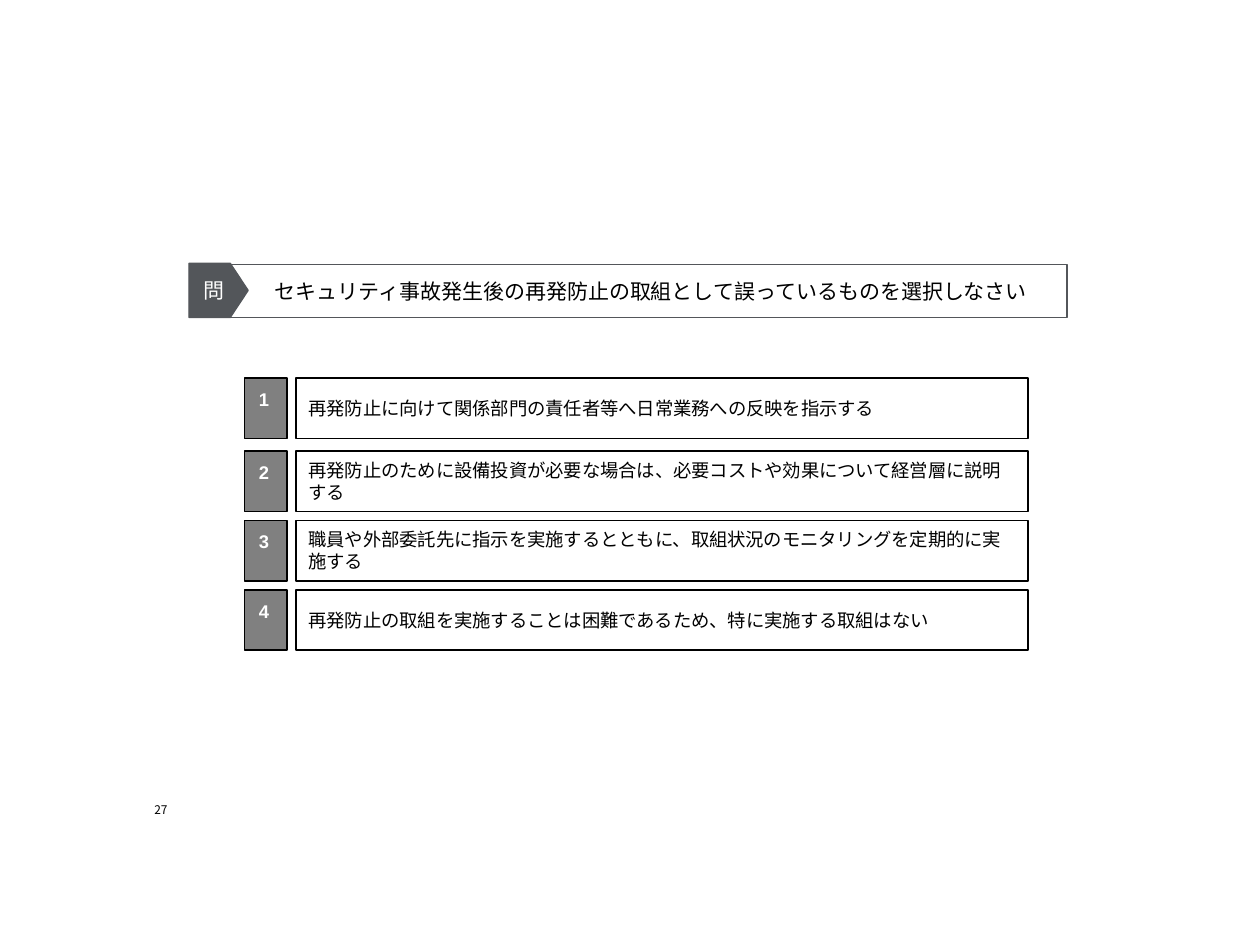
from lxml.etree import SubElement
from pptx import Presentation
from pptx.dml.color import RGBColor
from pptx.enum.shapes import MSO_SHAPE
from pptx.enum.text import MSO_ANCHOR, MSO_AUTO_SIZE, PP_ALIGN
from pptx.oxml.ns import qn
from pptx.util import Inches, Pt

JAPANESE_FONT = "Noto Sans CJK JP"


def color(value):
    return RGBColor.from_string(value)


def write_text(shape, text, size=10.5, font="Arial", ink="000000", bold=False,
               align=PP_ALIGN.LEFT, anchor=MSO_ANCHOR.MIDDLE,
               insets=(0.1, 0.05, 0.1, 0.05), wrap=True):
    frame = shape.text_frame
    frame.auto_size = MSO_AUTO_SIZE.NONE
    frame.word_wrap = wrap
    frame.vertical_anchor = anchor
    (frame.margin_left, frame.margin_top,
     frame.margin_right, frame.margin_bottom) = map(Inches, insets)
    para = frame.paragraphs[0]
    para.alignment = align
    span = para.add_run()
    span.text = text
    span.font.size = Pt(size)
    span.font.name = font
    span.font.bold = bold
    span.font.color.rgb = color(ink)
    east_asian = SubElement(span.font._element, qn("a:ea"))
    east_asian.set("typeface", JAPANESE_FONT)


class QuizPage:
    slate = "53565A"
    gray = "808080"
    white = "FFFFFF"
    black = "000000"

    def __init__(self, deck):
        self.page = deck.slides.add_slide(deck.slide_layouts[5])

    def paint(self, shape, fill, line, width):
        if fill:
            shape.fill.solid()
            shape.fill.fore_color.rgb = color(fill)
        else:
            shape.fill.background()
        shape.line.color.rgb = color(line)
        shape.line.width = Pt(width)

    def block(self, kind, place, fill, line, width=1):
        shape = self.page.shapes.add_shape(kind, *map(Inches, place))
        shape.shadow.inherit = False
        self.paint(shape, fill, line, width)
        return shape

    def question(self, text):
        title = self.page.shapes.title
        title.left, title.top, title.width, title.height = map(
            Inches, (1.8, 2.1, 6.67, 0.42))
        self.paint(title, self.white, self.slate, 1)
        write_text(title, text, size=12, insets=(0.38, 0.03, 0.03, 0.03))

    def question_tag(self, text):
        tag = self.block(MSO_SHAPE.PENTAGON, (1.5, 2.09, 0.47, 0.43),
                         self.slate, self.slate, 0.75)
        tag.adjustments[0] = 0.33
        write_text(tag, text, size=12, font=JAPANESE_FONT, ink=self.white,
                   align=PP_ALIGN.CENTER, wrap=False)

    def choice(self, number, text, top):
        answer = self.block(MSO_SHAPE.RECTANGLE, (2.35, top, 5.81, 0.48),
                            None, self.black)
        write_text(answer, text)
        label = self.block(MSO_SHAPE.RECTANGLE, (1.94, top, 0.34, 0.48),
                           self.gray, self.black)
        write_text(label, str(number), ink=self.white, bold=True,
                   align=PP_ALIGN.CENTER, anchor=MSO_ANCHOR.TOP,
                   insets=(0.08, 0.08, 0.11, 0.05))

    def page_number(self, text):
        box = self.page.shapes.add_textbox(
            *map(Inches, (1.18, 6.34, 0.15, 0.14)))
        write_text(box, text, size=6.8, font=JAPANESE_FONT,
                   align=PP_ALIGN.RIGHT, anchor=MSO_ANCHOR.BOTTOM,
                   insets=(0, 0, 0, 0), wrap=False)


def main():
    deck = Presentation()
    deck.slide_width = Inches(10)
    deck.slide_height = Inches(7.5)
    quiz = QuizPage(deck)
    quiz.question("セキュリティ事故発生後の再発防止の取組として誤っているものを選択しなさい")
    quiz.question_tag("問")
    choices = [
        (3.0, "再発防止に向けて関係部門の責任者等へ日常業務への反映を指示する"),
        (3.58, "再発防止のために設備投資が必要な場合は、必要コストや効果について経営層に説明する"),
        (4.13, "職員や外部委託先に指示を実施するとともに、取組状況のモニタリングを定期的に実施する"),
        (4.68, "再発防止の取組を実施することは困難であるため、特に実施する取組はない"),
    ]
    for number, (top, text) in enumerate(choices, start=1):
        quiz.choice(number, text, top)
    quiz.page_number("27")
    deck.save("out.pptx")


if __name__ == "__main__":
    main()
